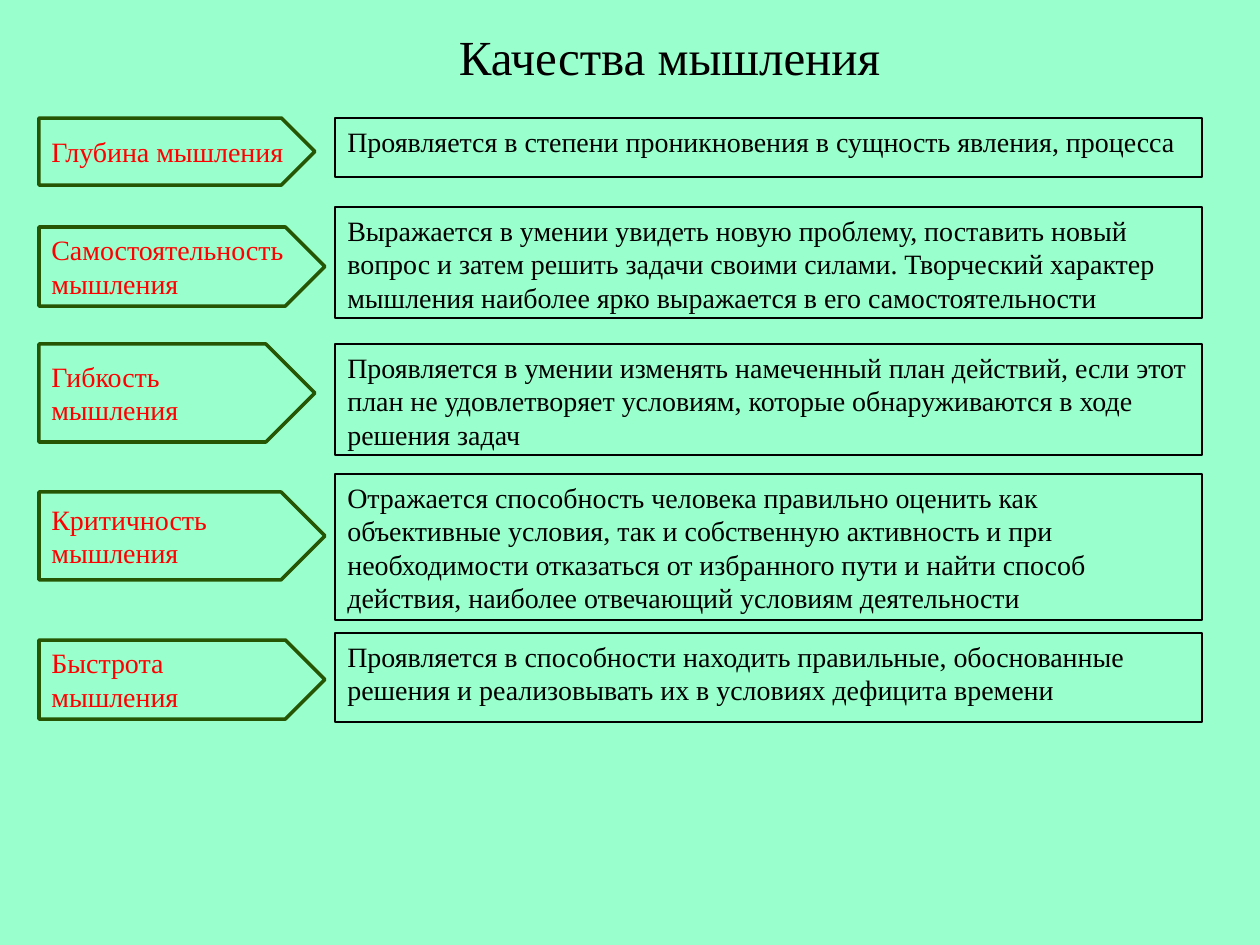
from dataclasses import dataclass

from pptx import Presentation
from pptx.dml.color import RGBColor
from pptx.enum.shapes import MSO_SHAPE
from pptx.enum.text import MSO_ANCHOR, MSO_AUTO_SIZE, PP_ALIGN
from pptx.util import Emu, Pt

RECTANGLE = MSO_SHAPE.RECTANGLE
PENTAGON = MSO_SHAPE.PENTAGON
TOP = MSO_ANCHOR.TOP
MIDDLE = MSO_ANCHOR.MIDDLE
LEFT = PP_ALIGN.LEFT
CENTER = PP_ALIGN.CENTER
GROW = MSO_AUTO_SIZE.SHAPE_TO_FIT_TEXT

EMU_PER_PX = 914400 / 126
FONT = "Times New Roman"
COLORS = {
    "background": "99FFCC",
    "text": "000000",
    "quality": "FF0000",
    "frame": "000000",
    "arrow": "265504",
}

ARROW_LEFT = 39
FRAME_LEFT = 335
FRAME_WIDTH = 867


@dataclass(frozen=True)
class Box:
    left: int
    top: int
    width: int
    height: int

    def emu(self) -> list[Emu]:
        lengths = (self.left, self.top, self.width, self.height)
        return [Emu(round(length * EMU_PER_PX)) for length in lengths]


@dataclass(frozen=True)
class Style:
    preset: MSO_SHAPE
    line_color: str
    line_width: float
    text_color: str
    anchor: MSO_ANCHOR


@dataclass(frozen=True)
class Quality:
    name: str
    arrow_top: int
    arrow_width: int
    arrow_height: int
    description: str
    frame_top: int
    frame_height: int


ARROW = Style(PENTAGON, "arrow", 2, "quality", MIDDLE)
FRAME = Style(RECTANGLE, "frame", 0.75, "text", TOP)

QUALITIES = [
    Quality("Глубина мышления", 118, 276, 67,
            "Проявляется в степени проникновения в сущность явления, процесса",
            118, 59),
    Quality("Самостоятельность мышления", 227, 286, 79,
            "Выражается в умении увидеть новую проблему, поставить новый вопрос "
            "и затем решить задачи своими силами. Творческий характер мышления "
            "наиболее ярко выражается в его самостоятельности",
            207, 111),
    Quality("Гибкость мышления", 344, 276, 98,
            "Проявляется в умении изменять намеченный план действий, если этот "
            "план не удовлетворяет условиям, которые обнаруживаются в ходе "
            "решения задач",
            344, 111),
    Quality("Критичность мышления", 492, 286, 88,
            "Отражается способность человека правильно оценить как объективные "
            "условия, так и собственную активность и при необходимости "
            "отказаться от избранного пути и найти способ действия, наиболее "
            "отвечающий условиям деятельности",
            474, 146),
    Quality("Быстрота мышления", 640, 286, 79,
            "Проявляется в способности находить правильные, обоснованные решения "
            "и реализовывать их в условиях дефицита времени",
            633, 89),
]


def color(name: str) -> RGBColor:
    return RGBColor.from_string(COLORS[name])


def write_text(shape, text: str, size: int, color_name: str, alignment: PP_ALIGN) -> None:
    paragraph = shape.text_frame.paragraphs[0]
    paragraph.alignment = alignment
    run = paragraph.add_run()
    run.text = text
    run.font.name = FONT
    run.font.size = Pt(size)
    run.font.color.rgb = color(color_name)


def draw_title(slide, text: str, box: Box) -> None:
    shape = slide.shapes.add_textbox(*box.emu())
    shape.text_frame.word_wrap = False
    shape.text_frame.auto_size = GROW
    write_text(shape, text, 28, "text", CENTER)


def draw_outlined(slide, text: str, box: Box, style: Style) -> None:
    shape = slide.shapes.add_shape(style.preset, *box.emu())
    shape.shadow.inherit = False
    shape.fill.background()
    shape.line.color.rgb = color(style.line_color)
    shape.line.width = Pt(style.line_width)
    shape.text_frame.word_wrap = True
    shape.text_frame.vertical_anchor = style.anchor
    write_text(shape, text, 16, style.text_color, LEFT)


def draw_quality(slide, quality: Quality) -> None:
    frame = Box(FRAME_LEFT, quality.frame_top, FRAME_WIDTH, quality.frame_height)
    arrow = Box(ARROW_LEFT, quality.arrow_top, quality.arrow_width, quality.arrow_height)
    draw_outlined(slide, quality.description, frame, FRAME)
    draw_outlined(slide, quality.name, arrow, ARROW)


def main() -> None:
    presentation = Presentation()
    presentation.slide_width, presentation.slide_height = Box(0, 0, 1260, 945).emu()[2:]
    slide = presentation.slides.add_slide(presentation.slide_layouts[6])
    slide.background.fill.solid()
    slide.background.fill.fore_color.rgb = color("background")
    draw_title(slide, "Качества мышления", Box(444, 20, 451, 72))
    for quality in QUALITIES:
        draw_quality(slide, quality)
    presentation.save("out.pptx")


if __name__ == "__main__":
    main()
